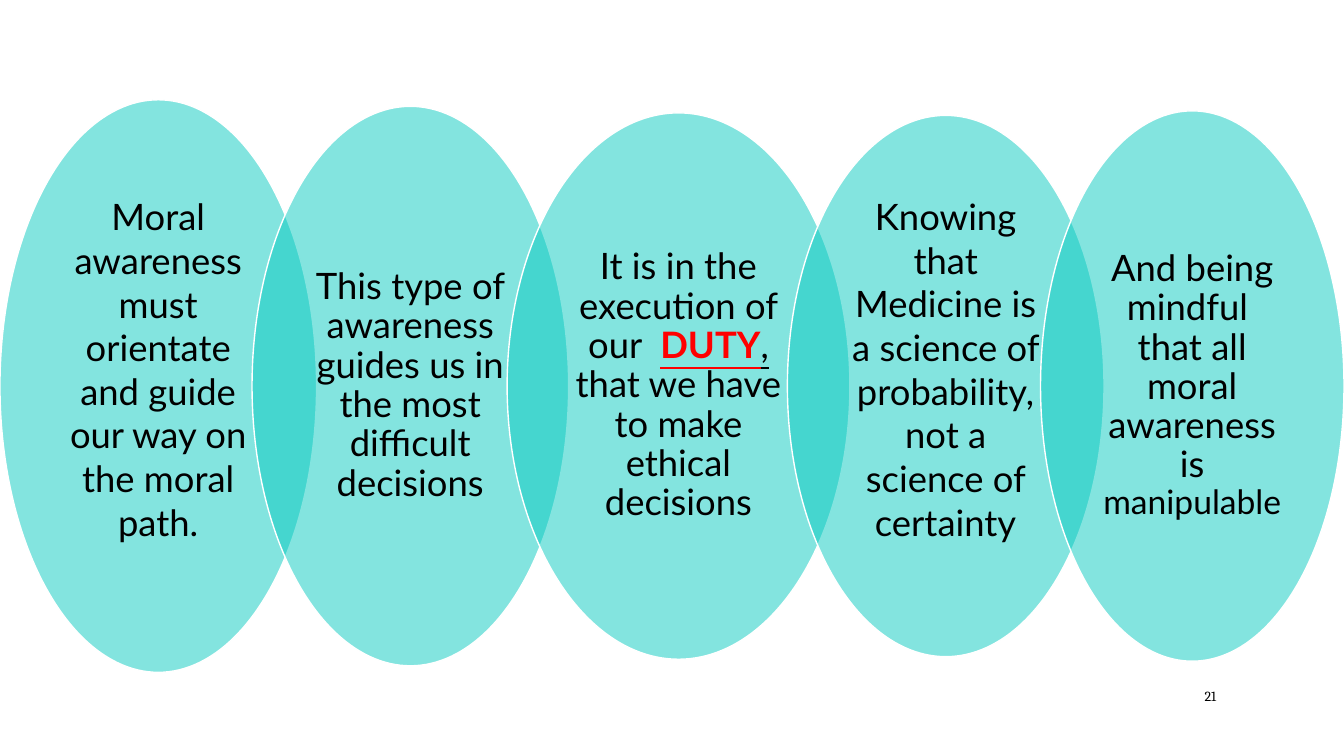
"""Build a slide of five overlapping ellipses on moral awareness and duty."""
from dataclasses import dataclass
from typing import Any

import lxml.etree
import pptx
import pptx.dml.color
import pptx.enum.shapes
import pptx.enum.text
import pptx.oxml.ns
import pptx.util

Inches = pptx.util.Inches
Pt = pptx.util.Pt
Color = pptx.dml.color.RGBColor
Align = pptx.enum.text.PP_ALIGN


@dataclass(frozen=True)
class Theme:
    ellipse: Color = Color(0x08, 0xCA, 0xC1)
    outline: Color = Color(0xFF, 0xFF, 0xFF)
    text: Color = Color(0, 0, 0)
    accent: Color = Color(0xFF, 0, 0)
    opacity: int = 50
    body_font: str = "Lato"
    number_font: str = "Cambria"
    body_size: int = 26
    small_size: int = 24
    number_size: int = 10


THEME = Theme()


@dataclass(frozen=True)
class Span:
    text: str
    size: int = THEME.body_size
    color: Color = THEME.text
    bold: bool = False
    underline: bool = False
    font: str = THEME.body_font


@dataclass(frozen=True)
class Statement:
    left: float
    width: float
    height: float
    spans: tuple[Span, ...]
    line_spacing: float = 0.9
    bottom_inset: float = 0.04


CENTER_Y = 3.83
STATEMENTS = (
    Statement(0, 3.14, 5.68, (
        Span("Moral awareness must orientate and guide our way on the moral path."),
    ), line_spacing=1.0, bottom_inset=0.38),
    Statement(2.5, 3.14, 5.55, (
        Span("This type of awareness guides us in the most difficult decisions"),
    )),
    Statement(5.03, 3.4, 5.42, (
        Span("It is in the execution of our  "),
        Span("DUTY", color=THEME.accent, bold=True, underline=True),
        Span(",", underline=True),
        Span(" that we have to make ethical decisions"),
    )),
    Statement(7.81, 3.14, 5.37, (
        Span("Knowing that Medicine is a science of probability, "
             "not a science of certainty"),
    ), line_spacing=1.0, bottom_inset=0.38),
    Statement(10.32, 3.01, 5.46, (
        Span("And being mindful  that all moral awareness is "),
        Span("manipulable", size=THEME.small_size),
    )),
)


def write_text(shape: Any, spans: tuple[Span, ...], *, align: Any,
               line_spacing: float = 1.0, side_inset: float = 0.1,
               top_inset: float = 0.05, bottom_inset: float = 0.05) -> None:
    """Fill a shape with one formatted paragraph."""
    frame = shape.text_frame
    frame.word_wrap = True
    frame.vertical_anchor = pptx.enum.text.MSO_ANCHOR.MIDDLE
    frame.margin_left = frame.margin_right = Inches(side_inset)
    frame.margin_top = Inches(top_inset)
    frame.margin_bottom = Inches(bottom_inset)
    para = frame.paragraphs[0]
    para.alignment = align
    para.line_spacing = line_spacing
    for span in spans:
        run = para.add_run()
        run.text = span.text
        run.font.name = span.font
        run.font.size = Pt(span.size)
        run.font.bold = span.bold
        run.font.underline = span.underline
        run.font.color.rgb = span.color


def set_opacity(shape: Any, percent: int) -> None:
    """Make the solid fill of a shape partly transparent."""
    color = shape.fill._xPr.find(".//" + pptx.oxml.ns.qn("a:srgbClr"))
    alpha = lxml.etree.SubElement(color, pptx.oxml.ns.qn("a:alpha"))
    alpha.set("val", str(percent * 1000))


def draw_statement(page: Any, statement: Statement) -> None:
    """Draw one translucent ellipse with its statement."""
    ellipse = page.shapes.add_shape(
        pptx.enum.shapes.MSO_SHAPE.OVAL,
        Inches(statement.left), Inches(CENTER_Y - statement.height / 2),
        Inches(statement.width), Inches(statement.height))
    ellipse.shadow.inherit = False
    ellipse.fill.solid()
    ellipse.fill.fore_color.rgb = THEME.ellipse
    set_opacity(ellipse, THEME.opacity)
    ellipse.line.color.rgb = THEME.outline
    ellipse.line.width = Pt(1)
    write_text(ellipse, statement.spans, align=Align.CENTER,
               line_spacing=statement.line_spacing, side_inset=0.17,
               top_inset=0.04, bottom_inset=statement.bottom_inset)


def main() -> None:
    """Build and save the deck."""
    deck = pptx.Presentation()
    deck.slide_width = Inches(13.33)
    deck.slide_height = Inches(7.5)
    page = deck.slides.add_slide(deck.slide_layouts.get_by_name("Blank"))
    for statement in STATEMENTS:
        draw_statement(page, statement)
    number_box = page.shapes.add_textbox(
        Inches(11.08), Inches(6.75), Inches(1.08), Inches(0.3))
    write_text(number_box, (
        Span("21", size=THEME.number_size, font=THEME.number_font),
    ), align=Align.RIGHT)
    deck.save("out.pptx")


if __name__ == "__main__":
    main()
